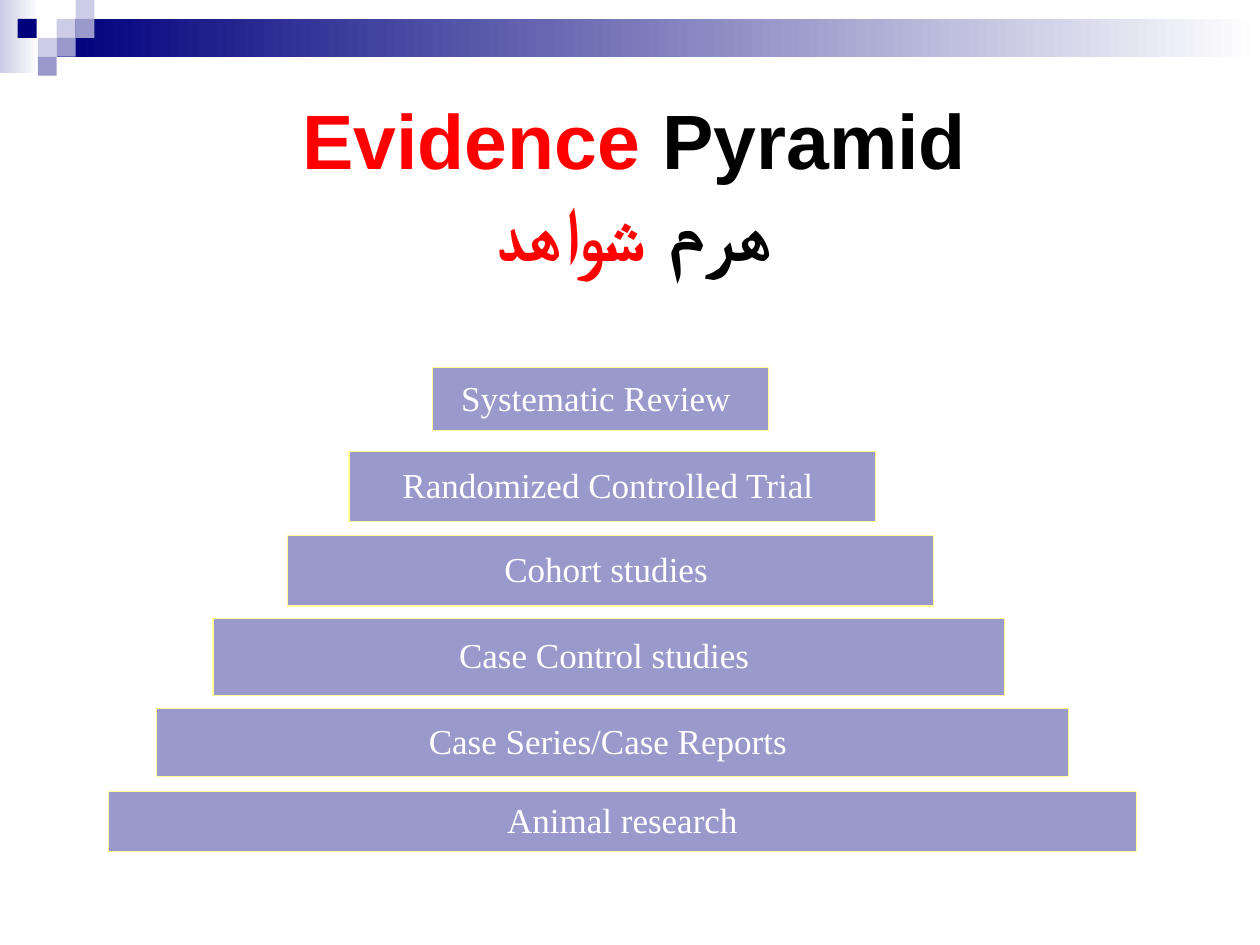
from lxml.etree import SubElement
from pptx import Presentation
from pptx.dml.color import RGBColor
from pptx.enum.shapes import MSO_SHAPE
from pptx.enum.text import MSO_ANCHOR, MSO_AUTO_SIZE, PP_ALIGN
from pptx.oxml.ns import qn
from pptx.util import Inches, Pt

NAVY, LAVENDER, PALE = "00007D", "9999CC", "CCCCE6"
WHITE, BLACK, RED, YELLOW = "FFFFFF", "000000", "FF0000", "FFFF99"

GRADIENT_BANDS = [
    (0, 0, 0.31, 0.58, PALE),
    (0.45, 0.15, 9.55, 0.3, NAVY),
]
SQUARE = 0.15
SQUARES = [
    (0.45, 0.15, PALE),
    (0.6, 0, PALE),
    (0.6, 0.15, LAVENDER),
    (0.3, 0.3, PALE),
    (0.14, 0.15, NAVY),
    (0.45, 0.3, LAVENDER),
    (0.3, 0.45, LAVENDER),
]
LEVELS = [
    ("Systematic Review ", 3.43, 2.92, 2.67, 0.5),
    ("Randomized Controlled Trial ", 2.77, 3.58, 4.18, 0.56),
    ("Cohort studies ", 2.28, 4.25, 5.13, 0.56),
    ("Case Control studies ", 1.69, 4.91, 6.28, 0.61),
    ("Case Series/Case Reports ", 1.24, 5.62, 7.24, 0.54),
    ("Animal research", 0.86, 6.28, 8.16, 0.48),
]


def rgb(value):
    return RGBColor.from_string(value)


def format_font(font, color, **values):
    for name, value in values.items():
        setattr(font, name, value)
    font.color.rgb = rgb(color)


def add_block(slide, left, top, width, height, color, fades=False):
    """Add a borderless rectangle, solid or fading to white on the right."""
    block = slide.shapes.add_shape(
        MSO_SHAPE.RECTANGLE, *map(Inches, (left, top, width, height)))
    block.shadow.inherit = False
    block.line.fill.background()
    if fades:
        block.fill.gradient()
        block.fill.gradient_angle = 0
        for stop, stop_color in zip(block.fill.gradient_stops, (color, WHITE)):
            stop.color.rgb = rgb(stop_color)
        block.fill.gradient_stops[0].position = 0
        block.fill.gradient_stops[1].position = 1
    else:
        block.fill.solid()
        block.fill.fore_color.rgb = rgb(color)


def fill_title(slide):
    title = slide.shapes.title
    title.left, title.top, title.width, title.height = map(
        Inches, (1, 0.6, 8.07, 1.73))
    frame = title.text_frame
    frame.auto_size = MSO_AUTO_SIZE.NONE
    frame.vertical_anchor = MSO_ANCHOR.MIDDLE
    heading = frame.paragraphs[0]
    heading.alignment = PP_ALIGN.CENTER
    heading._p.get_or_add_pPr().set("rtl", "1")

    def add_words(words, color):
        run = heading.add_run()
        run.text = words
        format_font(run.font, color, name="Arial", size=Pt(44), bold=True)
        SubElement(run.font._element, qn("a:cs"), typeface="Arial")

    add_words("Evidence ", RED)
    add_words("Pyramid", BLACK)
    heading.add_line_break()
    add_words("هرم", BLACK)
    add_words(" شواهد", RED)


def add_cell_borders(cell, color, width):
    properties = cell._tc.get_or_add_tcPr()
    for position, side in enumerate(("lnL", "lnR", "lnT", "lnB")):
        border = SubElement(properties, qn(f"a:{side}"), w=str(Pt(width)))
        solid = SubElement(border, qn("a:solidFill"))
        SubElement(solid, qn("a:srgbClr"), val=color)
        properties.insert(position, border)  # borders precede the fill


def add_level(slide, label, left, top, width, height):
    """Add one step of the pyramid as a single-cell table."""
    table = slide.shapes.add_table(
        1, 1, *map(Inches, (left, top, width, height))).table
    table.first_row = table.horz_banding = False
    cell = table.cell(0, 0)
    cell.fill.solid()
    cell.fill.fore_color.rgb = rgb(LAVENDER)
    cell.vertical_anchor = MSO_ANCHOR.MIDDLE
    add_cell_borders(cell, YELLOW, 0.75)
    paragraph = cell.text_frame.paragraphs[0]
    paragraph.alignment = PP_ALIGN.CENTER
    run = paragraph.add_run()
    run.text = label
    format_font(run.font, WHITE, name="Times New Roman", size=Pt(20))


def main():
    presentation = Presentation()
    presentation.slide_width = Inches(10)
    presentation.slide_height = Inches(7.5)
    slide = presentation.slides.add_slide(presentation.slide_layouts[5])
    for band in GRADIENT_BANDS:
        add_block(slide, *band, fades=True)
    for left, top, color in SQUARES:
        add_block(slide, left, top, SQUARE, SQUARE, color)
    fill_title(slide)
    for level in LEVELS:
        add_level(slide, *level)
    presentation.save("out.pptx")


if __name__ == "__main__":
    main()
